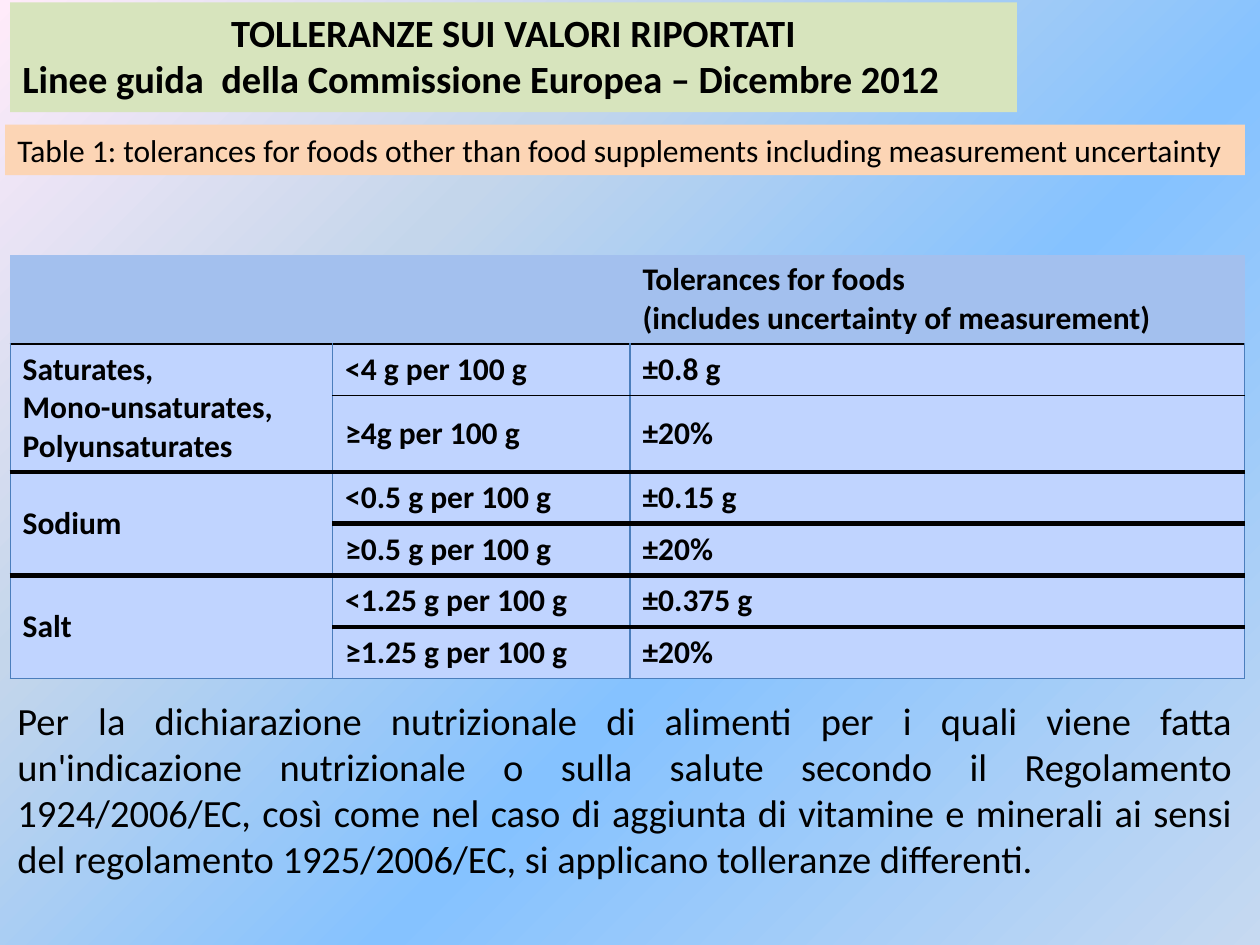
from dataclasses import dataclass
from typing import NamedTuple

from pptx import Presentation
from pptx.dml.color import RGBColor
from pptx.enum.shapes import MSO_SHAPE
from pptx.enum.text import MSO_ANCHOR, PP_ALIGN
from pptx.oxml import parse_xml
from pptx.util import Emu, Inches, Pt

NS = 'xmlns:a="http://schemas.openxmlformats.org/drawingml/2006/main"'
NS_P = 'xmlns:p="http://schemas.openxmlformats.org/presentationml/2006/main"'
PLAIN_STYLE = "{2D5ABB26-0587-4C30-8999-92F81FD0307C}"
UNIT = 0.04  # one grid step in inches: the slide is 250 columns by 187.5 rows


@dataclass(frozen=True)
class Theme:
    font: str = "Calibri"
    ink: str = "000000"
    green: str = "D7E4BD"
    peach: str = "FCD5B5"
    head: str = "A3C0EE"
    body: str = "C0D4FF"
    rule: str = "4B7EBC"
    large: int = 22
    small: int = 18
    # position in %, colour, opacity in %
    stops: tuple = ((0, "C6D9F1", 36), (40, "85C2FF", 100),
                    (70, "C4D6EB", 100), (100, "FFEBFA", 100))


class Box(NamedTuple):
    col: float
    row: float
    wide: float
    high: float

    def place(self) -> tuple:
        return tuple(grid(n) for n in self)


class Line(NamedTuple):
    color: str
    width: float


class Group(NamedTuple):
    name: list
    limits: list  # (amount, tolerance) pairs, one per row
    anchor: MSO_ANCHOR


THEME = Theme()
BLUE = Line(THEME.rule, 0.75)
THIN = Line(THEME.ink, 1)
THICK = Line(THEME.ink, 3)
# horizontal lines from the top of the table to its bottom
EDGES = [None, THIN, THIN, THICK, THICK, THICK, THICK, BLUE]

TABLE = Box(2, 50.5, 245, 71.75)
COLS = [64, 59, 122]
HEAD = ["Tolerances for foods", "(includes uncertainty of measurement)"]
GROUPS = [
    Group(["Saturates,", "Mono-unsaturates, Polyunsaturates"],
          [("<4 g per 100 g", "±0.8 g"), ("≥4g per 100 g", "±20%")],
          MSO_ANCHOR.MIDDLE),
    Group(["Sodium"],
          [("<0.5 g per 100 g", "±0.15 g"), ("≥0.5 g per 100 g", "±20%")],
          MSO_ANCHOR.TOP),
    Group(["Salt"],
          [("<1.25 g per 100 g", "±0.375 g"), ("≥1.25 g per 100 g", "±20%")],
          MSO_ANCHOR.TOP),
]
TITLE = ["TOLLERANZE SUI VALORI RIPORTATI",
         "Linee guida  della Commissione Europea – Dicembre 2012"]
CAPTION = ("Table 1: tolerances for foods other than food supplements "
           "including measurement uncertainty")
NOTE = ("Per la dichiarazione nutrizionale di alimenti per i quali viene fatta "
        "un'indicazione nutrizionale o sulla salute secondo il Regolamento "
        "1924/2006/EC, così come nel caso di aggiunta di vitamine e minerali "
        "ai sensi del regolamento 1925/2006/EC, si applicano tolleranze "
        "differenti.")


def grid(steps: float) -> Emu:
    return Inches(steps * UNIT)


def write(frame, lines: list, size: int = THEME.small, bold: bool = False,
          aligns: tuple = (PP_ALIGN.LEFT,)) -> None:
    """Fill a text frame; the last alignment holds for all further lines."""
    frame.word_wrap = True
    for i, line in enumerate(lines):
        para = frame.add_paragraph() if i else frame.paragraphs[0]
        para.alignment = aligns[min(i, len(aligns) - 1)]
        run = para.add_run()
        run.text = line
        run.font.name = THEME.font
        run.font.size = Pt(size)
        run.font.bold = bold
        run.font.color.rgb = RGBColor.from_string(THEME.ink)


def band(slide, box: Box, color: str, lines: list, **style) -> None:
    shape = slide.shapes.add_shape(MSO_SHAPE.RECTANGLE, *box.place())
    shape.shadow.inherit = False
    shape.fill.solid()
    shape.fill.fore_color.rgb = RGBColor.from_string(color)
    shape.line.fill.background()
    shape.text_frame.vertical_anchor = MSO_ANCHOR.TOP
    write(shape.text_frame, lines, **style)


def paint(cell, color: str, **lines) -> None:
    """Set a cell's fill and its border lines, given as L, R, T and B."""
    cell.fill.solid()
    cell.fill.fore_color.rgb = RGBColor.from_string(color)
    props = cell._tc.get_or_add_tcPr()
    for i, side in enumerate("LRTB"):
        line = lines.get(side)
        width = Pt(line.width) if line else 0
        fill = (f'<a:solidFill><a:srgbClr val="{line.color}"/></a:solidFill>'
                if line else "<a:noFill/>")
        props.insert(i, parse_xml(
            f'<a:ln{side} {NS} w="{width}">{fill}</a:ln{side}>'))


def backdrop(slide) -> None:
    stops = "".join(
        f'<a:gs pos="{pos * 1000}"><a:srgbClr val="{color}">'
        f'<a:alpha val="{alpha * 1000}"/></a:srgbClr></a:gs>'
        for pos, color, alpha in THEME.stops)
    slide._element.cSld.insert(0, parse_xml(
        f'<p:bg {NS_P} {NS}><p:bgPr><a:gradFill><a:gsLst>{stops}</a:gsLst>'
        '<a:path path="circle"><a:fillToRect l="100000" t="100000"/></a:path>'
        '</a:gradFill><a:effectLst/></p:bgPr></p:bg>'))


def limits(slide) -> None:
    """Draw the table of tolerances."""
    count = len(EDGES) - 1
    table = slide.shapes.add_table(count, len(COLS), *TABLE.place()).table
    table._tbl.tblPr[0].text = PLAIN_STYLE
    for col, wide in zip(table.columns, COLS):
        col.width = grid(wide)
    for row in table.rows:
        row.height = grid(TABLE.high / count)

    for c in range(len(COLS)):
        paint(table.cell(0, c), THEME.head, B=EDGES[1])
    write(table.cell(0, 2).text_frame, HEAD, bold=True)

    top = 1
    for group in GROUPS:
        end = top + len(group.limits)
        for r, texts in enumerate(group.limits, top):
            paint(table.cell(r, 0), THEME.body, L=BLUE, R=BLUE,
                  T=EDGES[top], B=EDGES[end])
            for c, text in enumerate(texts, 1):
                cell = table.cell(r, c)
                paint(cell, THEME.body, L=BLUE, R=BLUE,
                      T=EDGES[r], B=EDGES[r + 1])
                cell.vertical_anchor = group.anchor
                write(cell.text_frame, [text], bold=True)
        name = table.cell(top, 0)
        name.merge(table.cell(end - 1, 0))
        name.vertical_anchor = MSO_ANCHOR.MIDDLE
        write(name.text_frame, group.name, bold=True)
        top = end


def main() -> None:
    deck = Presentation()
    deck.slide_width, deck.slide_height = Inches(10), Inches(7.5)
    slide = deck.slides.add_slide(deck.slide_layouts[6])
    backdrop(slide)
    limits(slide)
    note = slide.shapes.add_textbox(*Box(1, 137, 246, 39.5).place())
    write(note.text_frame, [NOTE], size=THEME.large,
          aligns=(PP_ALIGN.JUSTIFY,))
    band(slide, Box(2, 0.5, 199.75, 21.75), THEME.green, TITLE,
         size=THEME.large, bold=True, aligns=(PP_ALIGN.CENTER, PP_ALIGN.LEFT))
    band(slide, Box(1, 24.75, 246, 10), THEME.peach, [CAPTION])
    deck.save("out.pptx")


if __name__ == "__main__":
    main()
